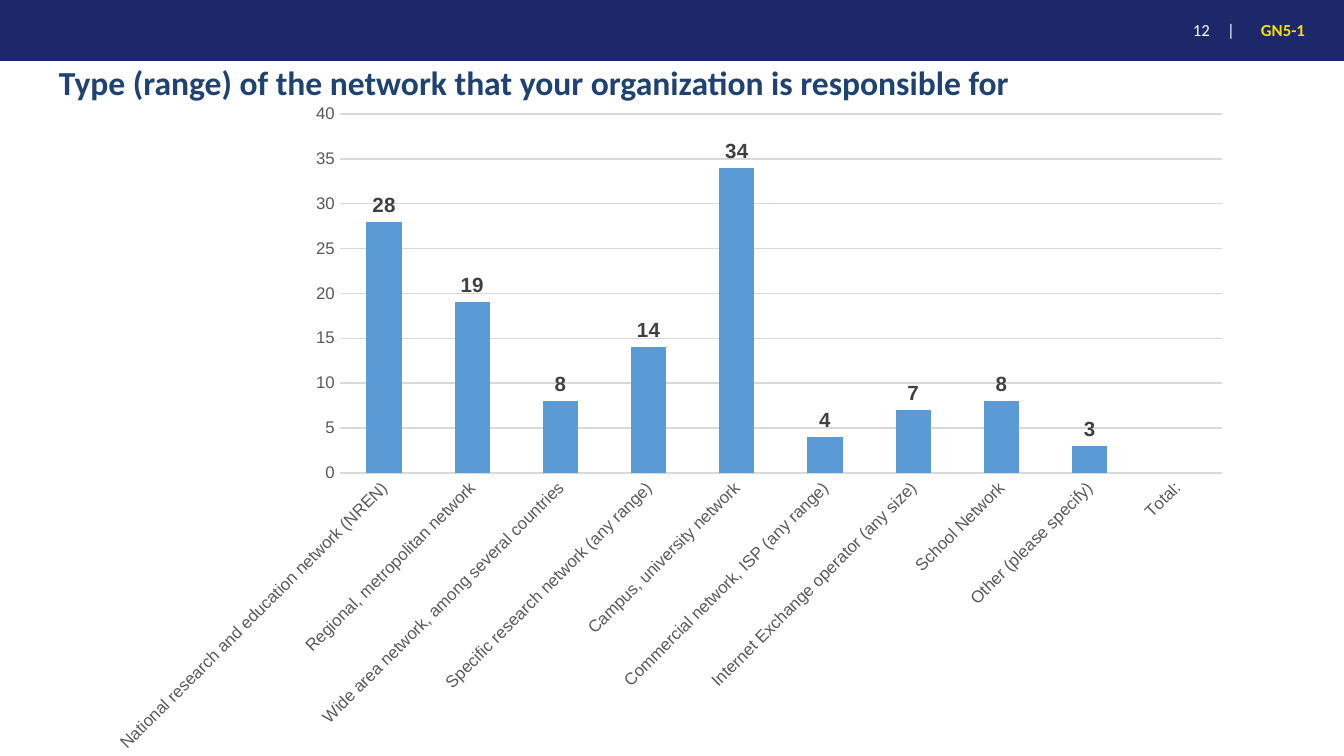
from dataclasses import dataclass

from lxml import etree
from pptx import Presentation
from pptx.chart.data import CategoryChartData
from pptx.dml.color import RGBColor
from pptx.enum.chart import XL_CHART_TYPE, XL_LABEL_POSITION, XL_TICK_MARK
from pptx.enum.shapes import MSO_SHAPE
from pptx.enum.text import MSO_ANCHOR, MSO_AUTO_SIZE, PP_ALIGN
from pptx.oxml.ns import qn
from pptx.util import Emu, Pt

COLUMNS = XL_CHART_TYPE.COLUMN_CLUSTERED
OUTSIDE_END = XL_LABEL_POSITION.OUTSIDE_END
NO_TICK = XL_TICK_MARK.NONE
RECTANGLE = MSO_SHAPE.RECTANGLE
MIDDLE = MSO_ANCHOR.MIDDLE
LEFT = PP_ALIGN.LEFT
NO_FIT = MSO_AUTO_SIZE.NONE

TITLE_ONLY = 5
EMU_PER_PX = 914400 / 134.4
SLIDE_SIZE = (1344, 756)
CHART_BOX = (93, 91, 1153, 676)
PLOT_BOX = (340, 114, 882, 359)

NETWORK_COUNTS = {
    "National research and education network (NREN)": 28,
    "Regional, metropolitan network": 19,
    "Wide area network, among several countries": 8,
    "Specific research network (any range)": 14,
    "Campus, university network": 34,
    "Commercial network, ISP (any range)": 4,
    "Internet Exchange operator (any size)": 7,
    "School Network": 8,
    "Other (please specify)": 3,
    "Total:": None,
}


@dataclass(frozen=True)
class Theme:
    heading_font: str = "Calibri"
    chart_font: str = "Arial"
    band: str = "1D286B"
    white: str = "FFFFFF"
    accent: str = "F4E200"
    title: str = "1F4270"
    bar: str = "5B9BD5"
    grid: str = "D9D9D9"
    chart_text: str = "000000"
    axis_text: str = "595959"
    value_text: str = "404040"
    title_size: int = 18
    value_size: int = 11
    chart_size: int = 10
    small_size: int = 9


def px(length):
    return Emu(round(length * EMU_PER_PX))


def apply(target, values):
    for attribute, value in values.items():
        setattr(target, attribute, value)


class SlideBuilder:
    def __init__(self, slide, theme):
        self.slide = slide
        self.theme = theme

    def style_font(self, font, name, size, color, bold=False):
        apply(font, {"name": name, "size": Pt(size), "bold": bold})
        font.color.rgb = RGBColor.from_string(color)

    def place(self, shape, box):
        apply(shape, dict(zip(("left", "top", "width", "height"), map(px, box))))

    def band(self, box):
        band = self.slide.shapes.add_shape(RECTANGLE, *map(px, box))
        band.shadow.inherit = False
        band.fill.solid()
        band.fill.fore_color.rgb = RGBColor.from_string(self.theme.band)
        band.line.fill.background()

    def set_text(self, shape, text, size, color, bold=False, spacing=None, indent=0, tab=None):
        frame = shape.text_frame
        apply(frame, {
            "word_wrap": True, "auto_size": NO_FIT, "vertical_anchor": MIDDLE,
            "margin_left": px(9), "margin_right": px(9),
            "margin_top": px(5), "margin_bottom": px(5),
        })
        frame.text = text
        paragraph = frame.paragraphs[0]
        apply(paragraph, {"alignment": LEFT, "line_spacing": spacing})
        properties = paragraph._p.get_or_add_pPr()
        properties.set("marL", str(px(indent)))
        properties.set("indent", "0")
        if tab:
            tabs = etree.SubElement(properties, qn("a:tabLst"))
            etree.SubElement(tabs, qn("a:tab"), pos=str(px(tab)), algn="l")
        self.style_font(paragraph.runs[0].font, self.theme.heading_font, size, color, bold)

    def title(self, text, box):
        title = self.slide.shapes.title
        self.place(title, box)
        self.set_text(title, text, self.theme.title_size, self.theme.title, True, 0.9)

    def label(self, text, box, color, **formats):
        label = self.slide.shapes.add_textbox(*map(px, box))
        self.set_text(label, text, self.theme.small_size, color, **formats)

    def column_chart(self, counts, box, plot_box):
        theme = self.theme
        data = CategoryChartData()
        data.categories = list(counts)
        data.add_series("Series 1", list(counts.values()))
        chart = self.slide.shapes.add_chart(COLUMNS, *map(px, box), data).chart
        apply(chart, {"has_legend": False, "has_title": False})
        self.style_font(chart.font, theme.chart_font, theme.chart_size, theme.chart_text)

        for axis in (chart.category_axis, chart.value_axis):
            apply(axis, {"major_tick_mark": NO_TICK, "minor_tick_mark": NO_TICK})
            axis.format.line.fill.background()
            self.style_font(axis.tick_labels.font, theme.chart_font,
                            theme.small_size, theme.axis_text)
        slant = chart.category_axis._element.find(qn("c:txPr")).find(qn("a:bodyPr"))
        slant.set("rot", "-2700000")
        slant.set("vert", "horz")

        apply(chart.value_axis, {
            "minimum_scale": 0, "maximum_scale": 40, "major_unit": 5,
            "has_major_gridlines": True,
        })
        grid = chart.value_axis.major_gridlines.format.line
        grid.width = Pt(0.75)
        grid.color.rgb = RGBColor.from_string(theme.grid)

        plot = chart.plots[0]
        apply(plot, {"gap_width": 150, "vary_by_categories": False})
        series = plot.series[0]
        series.format.fill.solid()
        series.format.fill.fore_color.rgb = RGBColor.from_string(theme.bar)
        apply(series.data_labels, {"show_value": True, "position": OUTSIDE_END})
        self.style_font(series.data_labels.font, theme.chart_font,
                        theme.value_size, theme.value_text, True)
        self.fix_plot(chart, box, plot_box)

    def fix_plot(self, chart, box, plot_box):
        left, top, width, height = box
        x, y, w, h = plot_box
        area = chart._chartSpace.chart.plotArea
        layout = area.find(qn("c:layout"))
        if layout is None:
            layout = etree.Element(qn("c:layout"))
            area.insert(0, layout)
        manual = etree.SubElement(layout, qn("c:manualLayout"))
        values = {
            "layoutTarget": "inner", "xMode": "edge", "yMode": "edge",
            "x": (x - left) / width, "y": (y - top) / height,
            "w": w / width, "h": h / height,
        }
        for tag, value in values.items():
            etree.SubElement(manual, qn(f"c:{tag}"), val=str(value))


def main():
    theme = Theme()
    deck = Presentation()
    apply(deck, dict(zip(("slide_width", "slide_height"), map(px, SLIDE_SIZE))))
    slide = deck.slides.add_slide(deck.slide_layouts[TITLE_ONLY])
    builder = SlideBuilder(slide, theme)
    builder.band((0, -4, 1344, 65))
    builder.label("12\t|", (1173, 12, 74, 36), theme.white, indent=11, tab=48)
    builder.label("GN5-1", (1252, 15, 92, 32), theme.accent, bold=True, spacing=0.9)
    builder.title("Type (range) of the network that your organization is responsible for",
                  (50, 43, 1035, 83))
    builder.column_chart(NETWORK_COUNTS, CHART_BOX, PLOT_BOX)
    deck.save("out.pptx")


if __name__ == "__main__":
    main()
